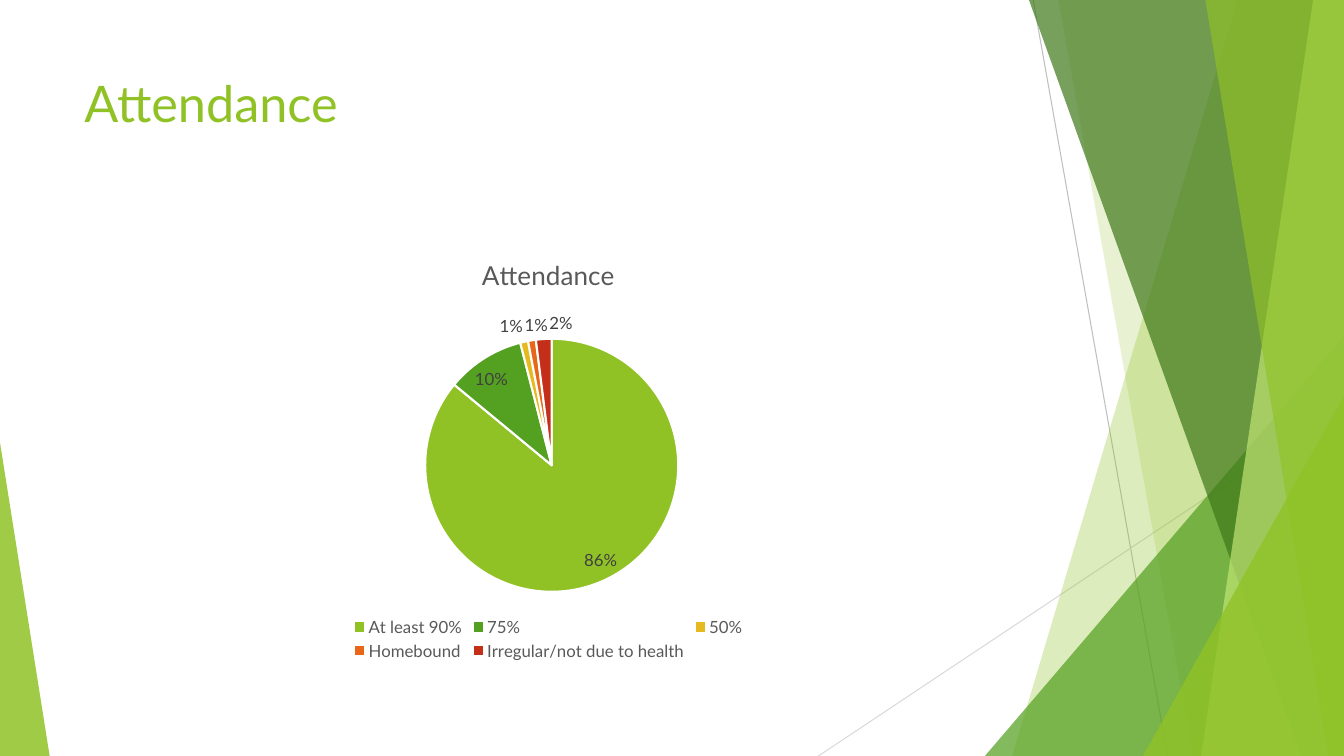
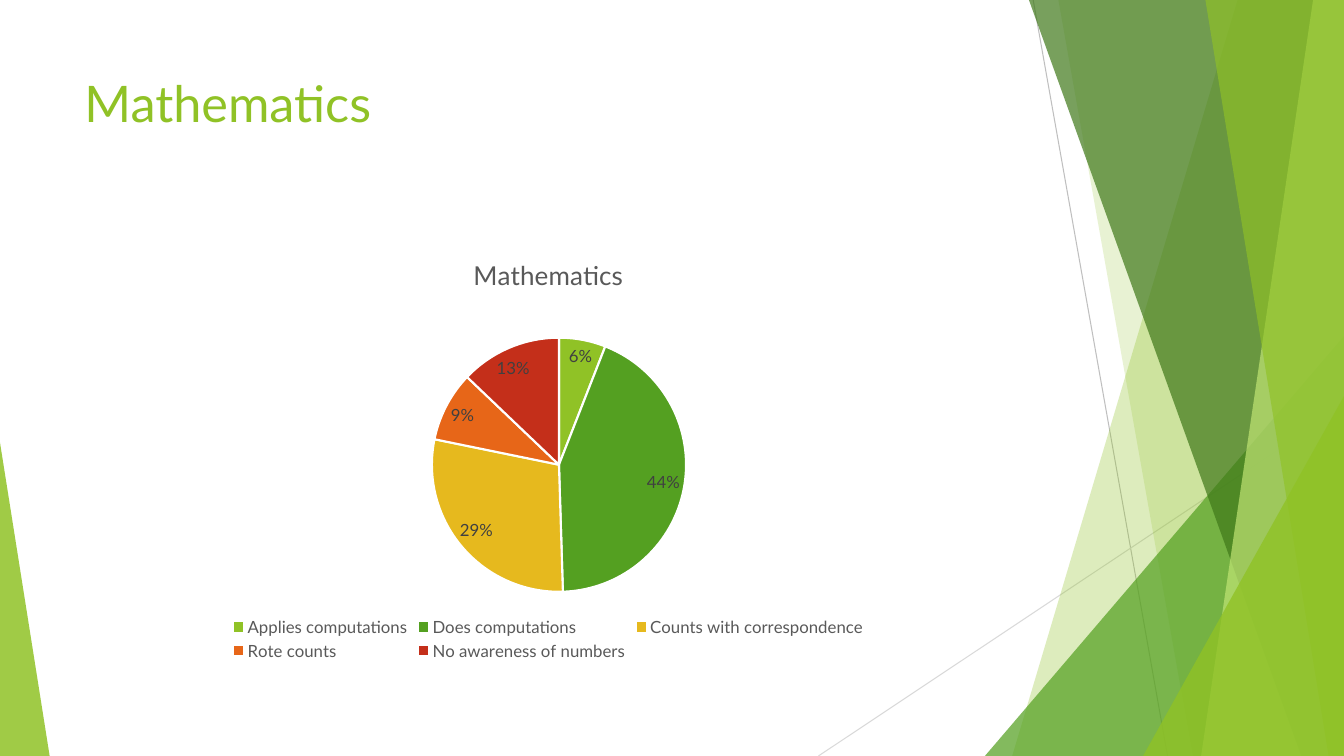
"""Build two report slides, each with a pie chart over a faceted green design."""
from dataclasses import dataclass

from lxml.etree import SubElement
from pptx import Presentation
from pptx.chart.data import CategoryChartData
from pptx.dml.color import RGBColor
from pptx.enum.chart import XL_CHART_TYPE as ChartType
from pptx.enum.chart import XL_LABEL_POSITION as LabelPosition
from pptx.enum.chart import XL_LEGEND_POSITION as LegendPosition
from pptx.enum.shapes import MSO_CONNECTOR as Connector
from pptx.enum.shapes import MSO_SHAPE as Preset
from pptx.oxml.ns import qn
from pptx.shapes.autoshape import Shape
from pptx.slide import Slide
from pptx.text.text import Font
from pptx.util import Pt

FONT = "Lato"
WIDTH, HEIGHT = 960, 540
MARGIN, CONTENT_WIDTH = 53.3, 676.8

WHITE = RGBColor(0xFF, 0xFF, 0xFF)
LIME = RGBColor(0x90, 0xC2, 0x26)
GREEN = RGBColor(0x54, 0xA0, 0x21)
DARK_GREEN = RGBColor(0x3F, 0x78, 0x19)
PALE_LIME = RGBColor(0xC0, 0xE4, 0x74)
GOLD = RGBColor(0xE6, 0xB9, 0x1E)
ORANGE = RGBColor(0xE7, 0x66, 0x18)
RED = RGBColor(0xC4, 0x2F, 0x1A)
TEXT_GRAY = RGBColor(0x59, 0x59, 0x59)
LABEL_GRAY = RGBColor(0x40, 0x40, 0x40)
LINE_GRAY = RGBColor(0xBF, 0xBF, 0xBF)
LIGHT_LINE_GRAY = RGBColor(0xD9, 0xD9, 0xD9)
SLICE_COLORS = (LIME, GREEN, GOLD, ORANGE, RED)


@dataclass(frozen=True)
class Ray:
    start: tuple[float, float]
    end: tuple[float, float]
    color: RGBColor


@dataclass(frozen=True)
class Band:
    top_left: float
    bottom_left: float
    color: RGBColor
    opacity: int


@dataclass(frozen=True)
class Corner:
    left: float
    top: float
    width: float
    apex: float
    color: RGBColor
    opacity: int


@dataclass(frozen=True)
class Report:
    title: str
    shares: dict[str, int]


RAYS = (
    Ray((738, 0), (834, HEIGHT), LINE_GRAY),
    Ray((WIDTH, 290), (584.6, HEIGHT), LIGHT_LINE_GRAY),
)
FACETS = (
    Band(884, 723, LIME, 30),
    Band(756, 852, LIME, 20),
    Corner(703.5, 240, 256.5, 1, GREEN, 72),
    Band(735, 929.5, DARK_GREEN, 70),
    Band(938, 858, PALE_LIME, 70),
    Band(861, 949, LIME, 65),
    Corner(816.5, 283, 143.5, 1, LIME, 80),
    Corner(0, 316, 35.5, 0, LIME, 85),
)
REPORTS = (
    Report("Attendance", {
        "At least 90%": 86,
        "75%": 10,
        "50%": 1,
        "Homebound": 1,
        "Irregular/not due to health": 2,
    }),
    Report("Mathematics", {
        "Applies computations": 6,
        "Does computations": 44,
        "Counts with correspondence": 29,
        "Rote counts": 9,
        "No awareness of numbers": 13,
    }),
)


def style_font(font: Font, size: float, color: RGBColor) -> None:
    font.name = FONT
    font.size = Pt(size)
    font.bold = False
    font.color.rgb = color


def paint(shape: Shape, color: RGBColor, opacity: int) -> None:
    shape.shadow.inherit = False
    shape.fill.solid()
    shape.fill.fore_color.rgb = color
    shape.line.fill.background()
    for color_node in shape.element.spPr.iter(qn("a:srgbClr")):
        SubElement(color_node, qn("a:alpha")).set("val", str(opacity * 1000))


def draw_ray(slide: Slide, ray: Ray) -> None:
    points = [Pt(value) for value in ray.start + ray.end]
    line = slide.shapes.add_connector(Connector.STRAIGHT, *points)
    line.line.color.rgb = ray.color
    line.line.width = Pt(0.75)
    SubElement(line.element.spPr, qn("a:effectLst"))


def draw_band(slide: Slide, band: Band) -> None:
    builder = slide.shapes.build_freeform(Pt(band.top_left), 0)
    builder.add_line_segments([
        (Pt(WIDTH), 0),
        (Pt(WIDTH), Pt(HEIGHT)),
        (Pt(band.bottom_left), Pt(HEIGHT)),
    ])
    paint(builder.convert_to_shape(), band.color, band.opacity)


def draw_corner(slide: Slide, corner: Corner) -> None:
    shape = slide.shapes.add_shape(
        Preset.ISOSCELES_TRIANGLE, Pt(corner.left), Pt(corner.top),
        Pt(corner.width), Pt(HEIGHT - corner.top))
    shape.adjustments[0] = corner.apex
    paint(shape, corner.color, corner.opacity)


def draw_design(slide: Slide) -> None:
    for ray in RAYS:
        draw_ray(slide, ray)
    for facet in FACETS:
        if isinstance(facet, Band):
            draw_band(slide, facet)
        else:
            draw_corner(slide, facet)


def draw_title(slide: Slide, title: str) -> None:
    box = slide.shapes.add_textbox(
        Pt(MARGIN), Pt(48), Pt(CONTENT_WIDTH), Pt(104))
    box.text_frame.word_wrap = True
    box.text_frame.text = title
    style_font(box.text_frame.paragraphs[0].runs[0].font, 36, LIME)


def draw_pie(slide: Slide, report: Report) -> None:
    data = CategoryChartData()
    data.categories = list(report.shares)
    data.add_series(report.title, list(report.shares.values()))
    chart = slide.shapes.add_chart(
        ChartType.PIE, Pt(MARGIN), Pt(170), Pt(CONTENT_WIDTH), Pt(305),
        data).chart
    chart.font.name = FONT
    chart.font.size = Pt(10)

    chart.has_title = True
    chart.chart_title.include_in_layout = False
    title_frame = chart.chart_title.text_frame
    title_frame.text = report.title
    style_font(title_frame.paragraphs[0].runs[0].font, 18.6, TEXT_GRAY)

    chart.has_legend = True
    chart.legend.position = LegendPosition.BOTTOM
    chart.legend.include_in_layout = False
    style_font(chart.legend.font, 12, TEXT_GRAY)

    plot = chart.plots[0]
    plot.vary_by_categories = True
    for index, color in enumerate(SLICE_COLORS):
        slice_format = plot.series[0].points[index].format
        slice_format.fill.solid()
        slice_format.fill.fore_color.rgb = color
        slice_format.line.color.rgb = WHITE
        slice_format.line.width = Pt(1.5)

    plot.has_data_labels = True
    labels = plot.data_labels
    labels.show_value = False
    labels.show_percentage = True
    labels.number_format = "0%"
    labels.number_format_is_linked = False
    labels.position = LabelPosition.BEST_FIT
    style_font(labels.font, 12, LABEL_GRAY)


def main() -> None:
    deck = Presentation()
    deck.slide_width, deck.slide_height = Pt(WIDTH), Pt(HEIGHT)
    for report in REPORTS:
        slide = deck.slides.add_slide(deck.slide_layouts[6])
        draw_design(slide)
        draw_title(slide, report.title)
        draw_pie(slide, report)
    deck.save("out.pptx")


if __name__ == "__main__":
    main()
